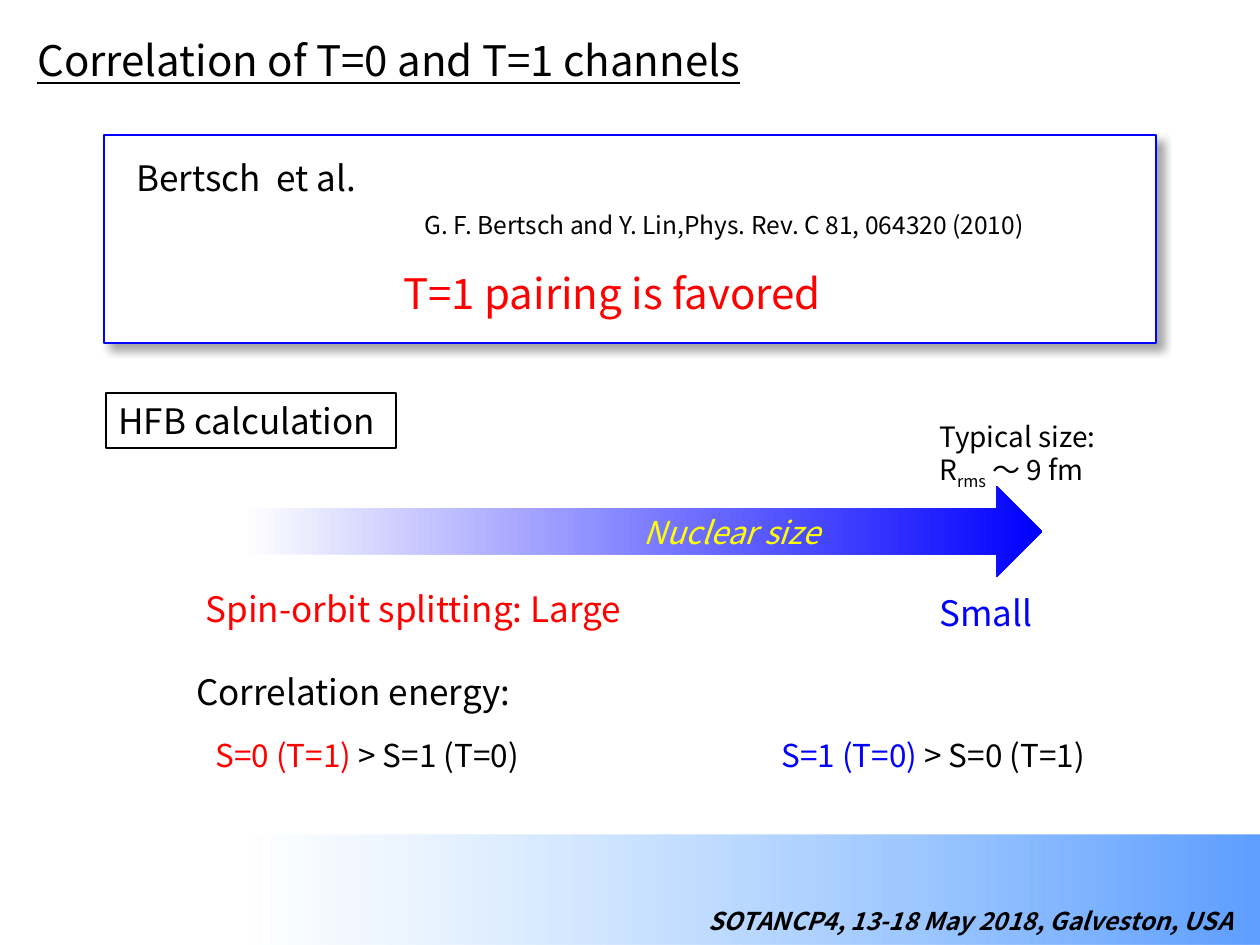
"""Build the slide on the correlation of T=0 and T=1 pairing channels."""
from dataclasses import dataclass

from lxml.etree import SubElement
from pptx import Presentation
from pptx.dml.color import RGBColor as RGB
from pptx.enum.shapes import MSO_SHAPE as SHAPE
from pptx.enum.text import MSO_ANCHOR as ANCHOR, MSO_AUTO_SIZE as AUTO, PP_ALIGN as ALIGN
from pptx.oxml import parse_xml
from pptx.oxml.ns import nsdecls, qn
from pptx.util import Emu, Pt


@dataclass(frozen=True)
class Theme:
    font: str = "Noto Sans CJK JP"
    black: str = "000000"
    white: str = "FFFFFF"
    red: str = "FF0000"
    blue: str = "0000FF"
    yellow: str = "FFFF00"
    sky: str = "5E9EFF"
    pale: str = "85C2FF"
    title: int = 24
    head: int = 20
    body: int = 18
    note: int = 16
    small: int = 14
    line: float = 0.75


class Deck:
    def __init__(self, theme, width, height):
        self.t = theme
        self.prs = Presentation()
        self.prs.slide_width, self.prs.slide_height = self.px(width, height)
        self.s = self.prs.slides.add_slide(self.prs.slide_layouts[6])

    def px(self, *values):
        return [Emu(round(v * 914400 / 126)) for v in values]

    def shape(self, kind, box, fill=None, line=None):
        sp = self.s.shapes.add_shape(kind, *self.px(*box))
        sp.shadow.inherit = False
        if fill:
            sp.fill.solid()
            sp.fill.fore_color.rgb = RGB.from_string(fill)
        else:
            sp.fill.background()
        if line:
            sp.line.color.rgb = RGB.from_string(line)
            sp.line.width = Pt(self.t.line)
        else:
            sp.line.fill.background()
        return sp

    def gradient(self, kind, box, stops, angle):
        sp = self.shape(kind, box)
        gs = "".join(
            f'<a:gs pos="{pos * 1000}"><a:srgbClr val="{color}">'
            f'<a:alpha val="{alpha * 1000}"/></a:srgbClr></a:gs>'
            for pos, color, alpha in stops)
        grad = parse_xml(
            f'<a:gradFill {nsdecls("a")} rotWithShape="1"><a:gsLst>{gs}</a:gsLst>'
            f'<a:lin ang="{angle * 60000}" scaled="0"/></a:gradFill>')
        spPr = sp._element.spPr
        spPr.replace(spPr.find(qn("a:noFill")), grad)

    def shadow(self, sp, alpha, blur, dist, angle):
        effects = sp._element.spPr.find(qn("a:effectLst"))
        effects.append(parse_xml(
            f'<a:outerShdw {nsdecls("a")} blurRad="{Pt(blur)}" dist="{Pt(dist)}" '
            f'dir="{angle * 60000}" algn="tl" rotWithShape="0">'
            f'<a:srgbClr val="{self.t.black}"><a:alpha val="{alpha * 1000}"/>'
            f'</a:srgbClr></a:outerShdw>'))

    def text(self, box, *paragraphs, size, sp=None, align=ALIGN.LEFT,
             anchor=ANCHOR.TOP, auto=AUTO.SHAPE_TO_FIT_TEXT, **style):
        sp = sp or self.s.shapes.add_textbox(*self.px(*box))
        tf = sp.text_frame
        frame = {"word_wrap": True, "auto_size": auto, "vertical_anchor": anchor}
        for name, value in frame.items():
            setattr(tf, name, value)
        for i, runs in enumerate(paragraphs):
            p = tf.add_paragraph() if i else tf.paragraphs[0]
            p.alignment = align
            for words, color, *base in runs:
                self.run(p, words, color, base, {"size": Pt(size), **style})

    def run(self, p, words, color, base, style):
        r = p.add_run()
        r.text = words
        for name, value in {"name": self.t.font, **style}.items():
            setattr(r.font, name, value)
        r.font.color.rgb = RGB.from_string(color)
        rPr = r.font._element
        SubElement(rPr, qn("a:ea")).set("typeface", self.t.font)
        if base:
            rPr.set("baseline", str(base[0] * 1000))

    def framed_text(self, box, *paragraphs, size):
        sp = self.shape(SHAPE.RECTANGLE, box, line=self.t.black)
        self.text(box, *paragraphs, size=size, sp=sp, auto=AUTO.NONE)


def main():
    t = Theme()
    d = Deck(t, 1260, 945)
    d.gradient(SHAPE.RECTANGLE, (0, 835, 1260, 110),
               [(0, t.sky, 100), (80, t.pale, 0), (100, t.pale, 0)], 180)
    d.text((530, 900, 716, 43), [("SOTANCP4, 13-18 May 2018, Galveston, USA", t.black)],
           size=t.small, align=ALIGN.RIGHT, bold=True, italic=True)

    d.text((25, 16, 820, 87), [("Correlation of T=0 and T=1 channels", t.black)],
           size=t.title, anchor=ANCHOR.MIDDLE, auto=AUTO.NONE, underline=True)

    panel = d.shape(SHAPE.RECTANGLE, (104, 135, 1052, 208), t.white, t.blue)
    d.shadow(panel, 35, 5, 5, 45)
    d.text((124, 150, 267, 55), [("Bertsch  et al.", t.black)], size=t.head)
    d.text((412, 204, 728, 43),
           [("G. F. Bertsch and Y. Lin,Phys. Rev. C 81, 064320 (2010)", t.black)],
           size=t.small)
    d.text((391, 261, 485, 63), [("T=1 pairing is favored", t.red)], size=t.title)

    d.framed_text((106, 393, 290, 55), [("HFB calculation", t.black)], size=t.head)
    d.text((927, 413, 238, 81), [("Typical size:", t.black)],
           [("R", t.black), ("rms", t.black, -25), (" 〜 9 fm", t.black)], size=t.note)
    d.gradient(SHAPE.RIGHT_ARROW, (243, 486, 799, 91),
               [(0, t.white, 100), (100, t.blue, 100)], 0)
    d.text((631, 507, 223, 50), [("Nuclear size", t.yellow)], size=t.body, italic=True)

    d.text((178, 581, 479, 55), [("Spin-orbit splitting: Large ", t.red)],
           size=t.head, align=ALIGN.CENTER)
    d.text((926, 585, 120, 55), [("Small ", t.blue)], size=t.head, align=ALIGN.CENTER)

    d.text((184, 664, 360, 55), [("Correlation energy:", t.black)], size=t.head)
    for left, winner, color, loser in [(203, "S=0 (T=1) ", t.red, "> S=1 (T=0)"),
                                       (769, "S=1 (T=0) ", t.blue, "> S=0 (T=1)")]:
        d.text((left, 730, 412, 50), [(winner, color), (loser, t.black)], size=t.body)
    d.prs.save("out.pptx")


if __name__ == "__main__":
    main()
